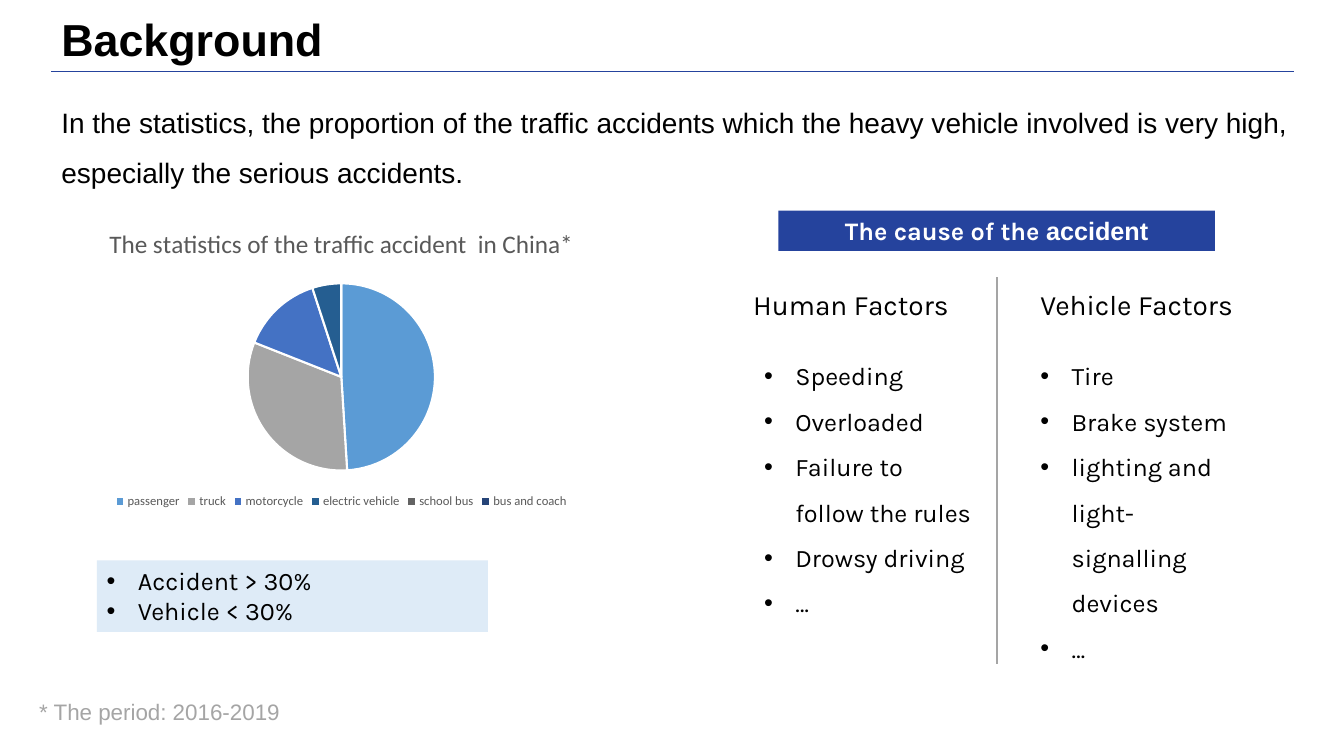
from dataclasses import dataclass

from lxml import etree
from pptx import Presentation
from pptx.chart.data import CategoryChartData
from pptx.dml.color import RGBColor
from pptx.enum.chart import XL_CHART_TYPE, XL_LEGEND_POSITION
from pptx.enum.shapes import MSO_CONNECTOR, MSO_SHAPE
from pptx.enum.text import MSO_ANCHOR, PP_ALIGN
from pptx.oxml import parse_xml
from pptx.oxml.ns import nsdecls, qn
from pptx.util import Inches, Pt

PIE = XL_CHART_TYPE.PIE
LEGEND_BOTTOM = XL_LEGEND_POSITION.BOTTOM
STRAIGHT = MSO_CONNECTOR.STRAIGHT
RECTANGLE = MSO_SHAPE.RECTANGLE
TOP, MIDDLE = MSO_ANCHOR.TOP, MSO_ANCHOR.MIDDLE
LEFT, CENTER = PP_ALIGN.LEFT, PP_ALIGN.CENTER


@dataclass(frozen=True)
class Theme:
    sans: str = "Arial"
    body: str = "Karla"
    chart: str = "Calibri"
    black: str = "000000"
    white: str = "FFFFFF"
    navy: str = "25439D"
    gray: str = "A5A5A5"
    chart_gray: str = "595959"
    pale_blue: str = "DEEBF7"
    title_size: int = 32
    lead_size: int = 20
    item_size: int = 18
    note_size: int = 16
    legend_size: int = 9
    slices: tuple = ("5B9BD5", "A5A5A5", "4472C4", "255E91", "636363", "264478")


THEME = Theme()
ACCIDENT_SHARES = {
    "passenger": 49,
    "truck": 32,
    "motorcycle": 14,
    "electric vehicle": 5,
    "school bus": 0,
    "bus and coach": 0,
}
PIE_AREA = {"x": 0.35, "y": 0.24, "w": 0.3, "h": 0.62}
HUMAN_FACTORS = ["Speeding", "Overloaded", "Failure to follow the rules", "Drowsy driving", "…"]
VEHICLE_FACTORS = ["Tire", "Brake system", "lighting and light-signalling devices", "…"]


def style_font(font, name, size, color, bold=False):
    values = {"name": name, "size": Pt(size), "bold": bold}
    for attribute, value in values.items():
        setattr(font, attribute, value)
    font.color.rgb = RGBColor.from_string(color)


def add_bullet(paragraph):
    properties = paragraph._p.get_or_add_pPr()
    indent = Inches(0.31)
    for attribute, value in {"marL": indent, "indent": -indent}.items():
        properties.set(attribute, str(int(value)))
    etree.SubElement(properties, qn("a:buFont")).set("typeface", "Arial")
    etree.SubElement(properties, qn("a:buChar")).set("char", "•")


def write_text(shape, lines, size, name=THEME.body, color=THEME.black, bold=False,
               align=LEFT, anchor=TOP, spacing=None, bullets=False):
    frame = shape.text_frame
    frame.word_wrap = True
    frame.vertical_anchor = anchor
    for index, line in enumerate(lines):
        paragraph = frame.add_paragraph() if index else frame.paragraphs[0]
        for attribute, value in {"alignment": align, "line_spacing": spacing}.items():
            setattr(paragraph, attribute, value)
        if bullets:
            add_bullet(paragraph)
        run = paragraph.add_run()
        run.text = line
        style_font(run.font, name, size, color, bold)


def add_text(slide, box, lines, size, **style):
    shape = slide.shapes.add_textbox(*map(Inches, box))
    write_text(shape, lines, size, **style)


def add_panel(slide, box, fill):
    shape = slide.shapes.add_shape(RECTANGLE, *map(Inches, box))
    shape.shadow.inherit = False
    shape.fill.solid()
    shape.fill.fore_color.rgb = RGBColor.from_string(fill)
    shape.line.fill.background()
    return shape


def add_rule(slide, start, end, color, width):
    rule = slide.shapes.add_connector(STRAIGHT, *map(Inches, start + end))
    rule.line.color.rgb = RGBColor.from_string(color)
    rule.line.width = Pt(width)
    etree.SubElement(rule._element.spPr, qn("a:effectLst"))


def add_header(slide, box):
    left, top, width, height = box
    bottom = top + height
    add_rule(slide, (left, bottom), (left + width, bottom), THEME.navy, 0.5)
    add_text(slide, (left, top, 6.67, height), ["Background"], THEME.title_size,
             name=THEME.sans, bold=True)


def add_introduction(slide, box):
    text = ("In the statistics, the proportion of the traffic accidents which the heavy "
            "vehicle involved is very high, especially the serious accidents.")
    add_text(slide, box, [text], THEME.lead_size, name=THEME.sans, spacing=1.5)


def add_accident_chart(slide, box):
    data = CategoryChartData()
    data.categories = list(ACCIDENT_SHARES)
    data.add_series("Series 1", list(ACCIDENT_SHARES.values()))
    chart = slide.shapes.add_chart(PIE, *map(Inches, box), data).chart
    style_font(chart.font, THEME.chart, 10, THEME.black)

    chart.has_title = True
    title = chart.chart_title
    title.include_in_layout = False
    run = title.text_frame.paragraphs[0].add_run()
    run.text = "The statistics of the traffic accident  in China*"
    style_font(run.font, THEME.chart, THEME.item_size, THEME.chart_gray)

    chart.has_legend = True
    chart.legend.position = LEGEND_BOTTOM
    chart.legend.include_in_layout = False
    style_font(chart.legend.font, THEME.chart, THEME.legend_size, THEME.chart_gray)

    plot = chart.plots[0]
    plot.vary_by_categories = True
    for index, color in enumerate(THEME.slices):
        slice_format = plot.series[0].points[index].format
        slice_format.fill.solid()
        slice_format.fill.fore_color.rgb = RGBColor.from_string(color)
        slice_format.line.color.rgb = RGBColor.from_string(THEME.white)
        slice_format.line.width = Pt(1.5)

    plot_area = chart._chartSpace.chart.plotArea
    for layout in plot_area.findall(qn("c:layout")):
        plot_area.remove(layout)
    modes = '<c:layoutTarget val="inner"/><c:xMode val="edge"/><c:yMode val="edge"/>'
    edges = "".join(f'<c:{key} val="{value}"/>' for key, value in PIE_AREA.items())
    plot_area.insert(0, parse_xml(
        f'<c:layout {nsdecls("c")}><c:manualLayout>{modes}{edges}</c:manualLayout></c:layout>'))


def add_findings(slide, box):
    panel = add_panel(slide, box, THEME.pale_blue)
    write_text(panel, ["Accident > 30%", "Vehicle < 30%"], THEME.item_size, bullets=True)


def add_causes(slide, box):
    left, top, width, height = box
    banner = add_panel(slide, (left + 0.48, top, 4.33, 0.4), THEME.navy)
    write_text(banner, ["The cause of the "], THEME.item_size, color=THEME.white,
               bold=True, align=CENTER)
    run = banner.text_frame.paragraphs[0].add_run()
    run.text = "accident"
    style_font(run.font, THEME.sans, THEME.item_size, THEME.white, True)

    middle = left + 2.65
    add_rule(slide, (middle, top + 0.66), (middle, top + height), THEME.gray, 1.5)

    right = left + width - 2.25
    columns = [
        ("Human Factors", HUMAN_FACTORS, left, 2.4, CENTER, left + 0.24),
        ("Vehicle Factors", VEHICLE_FACTORS, right, 2.21, LEFT, right),
    ]
    for heading, factors, heading_left, heading_width, align, list_left in columns:
        add_text(slide, (heading_left, top + 0.71, heading_width, 0.44), [heading],
                 THEME.lead_size, align=align)
        add_text(slide, (list_left, top + 1.29, 2.25, 2.78), factors, THEME.item_size,
                 spacing=1.5, bullets=True)


def add_footnote(slide, box):
    add_text(slide, box, ["* The period: 2016-2019"], THEME.note_size, name=THEME.sans,
             color=THEME.gray, anchor=MIDDLE)


def main():
    presentation = Presentation()
    presentation.slide_width = Inches(13.33)
    presentation.slide_height = Inches(7.5)
    slide = presentation.slides.add_slide(presentation.slide_layouts[6])
    add_header(slide, (0.51, 0.07, 12.32, 0.64))
    add_introduction(slide, (0.51, 0.83, 12.72, 1.05))
    add_accident_chart(slide, (0.29, 2.09, 6.19, 3))
    add_findings(slide, (0.96, 5.56, 3.88, 0.71))
    add_causes(slide, (7.24, 2.09, 5.23, 4.5))
    add_footnote(slide, (0.29, 6.87, 6.67, 0.37))
    presentation.save("out.pptx")


if __name__ == "__main__":
    main()
